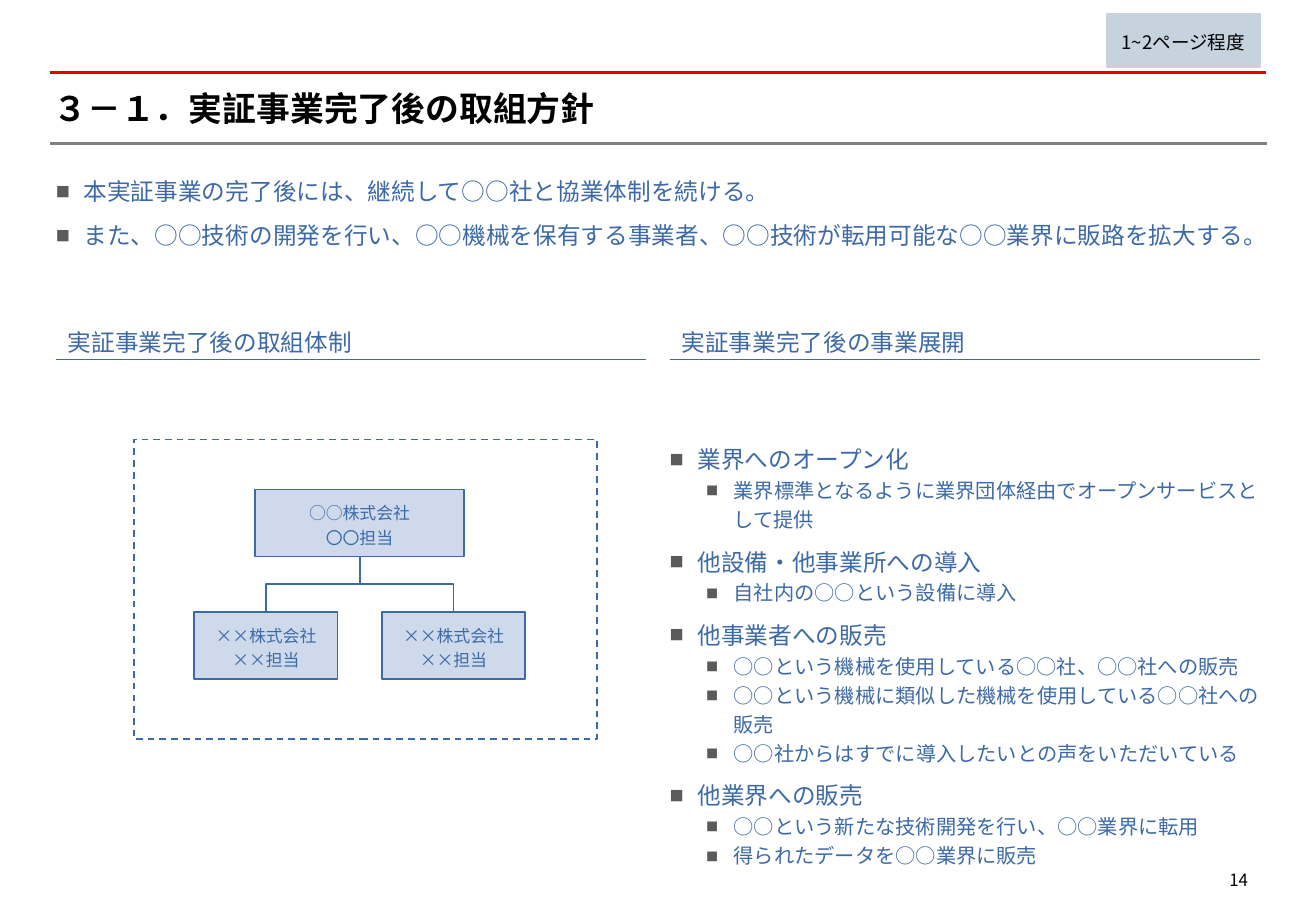
from lxml import etree
from pptx import Presentation
from pptx.dml.color import RGBColor
from pptx.enum.dml import MSO_LINE_DASH_STYLE as DASH
from pptx.enum.shapes import MSO_CONNECTOR as CONN, MSO_SHAPE
from pptx.enum.text import MSO_ANCHOR as ANCHOR, PP_ALIGN as ALIGN
from pptx.oxml.ns import qn
from pptx.util import Cm, Pt

FONT = "Noto Sans CJK JP"
BLACK = RGBColor(0x00, 0x00, 0x00)
BLUE = RGBColor(0x3D, 0x6A, 0xA7)
PALE_BLUE = RGBColor(0xCE, 0xDA, 0xEB)
TAG_GREY = RGBColor(0xC6, 0xD2, 0xDE)
RED = RGBColor(0xE6, 0x00, 0x00)
GREY = RGBColor(0x80, 0x80, 0x80)


def write(tf, text, size=14, color=BLUE, bold=False, align=ALIGN.LEFT,
          spacing=1.2, before=0, after=0, level=None):
    """Add a paragraph to tf; a level makes it a bullet."""
    p = tf.paragraphs[0]
    if p.runs:
        p = tf.add_paragraph()
    if level is not None:
        p.level = level
        pPr = p._p.get_or_add_pPr()
        pPr.set("marL", str(Cm(0.58 + 0.76 * level)))
        pPr.set("indent", str(Cm(-0.58)))
        clr = etree.SubElement(pPr, qn("a:buClr"))
        etree.SubElement(clr, qn("a:srgbClr"), val="5A5A5A")
        etree.SubElement(pPr, qn("a:buSzPct"), val="60000")
        etree.SubElement(pPr, qn("a:buFont"), typeface=FONT)
        etree.SubElement(pPr, qn("a:buChar"), char="■")
    p.alignment, p.line_spacing = align, spacing
    p.space_before, p.space_after = Pt(before), Pt(after)
    r = p.add_run()
    r.text = text
    r.font.name, r.font.size, r.font.bold = FONT, Pt(size), bold
    r.font.color.rgb = color
    etree.SubElement(r._r.get_or_add_rPr(), qn("a:ea"), typeface=FONT)


def set_frame(tf, wrap=True, anchor=ANCHOR.TOP, side=0, top=0):
    tf.word_wrap, tf.vertical_anchor = wrap, anchor
    tf.margin_left = tf.margin_right = Cm(side)
    tf.margin_top = tf.margin_bottom = Cm(top)
    return tf


prs = Presentation()
prs.slide_width, prs.slide_height = Cm(27.51), Cm(19.05)
s = prs.slides.add_slide(prs.slide_layouts[5])

# Title
title = s.shapes.title
title.left, title.top, title.width, title.height = Cm(1.12), Cm(1.83), Cm(25.17), Cm(0.86)
write(set_frame(title.text_frame, anchor=ANCHOR.MIDDLE), "３－１．実証事業完了後の取組方針",
      size=20, color=BLACK, bold=True, spacing=1)

# Page number
sp = s.shapes.add_textbox(Cm(25.22), Cm(17.98), Cm(1.12), Cm(0.71))
write(set_frame(sp.text_frame, wrap=False, side=0.25, top=0.13), "14",
      size=10, color=BLACK, align=ALIGN.RIGHT)

# Summary
summary = [
    "本実証事業の完了後には、継続して○○社と協業体制を続ける。",
    "また、○○技術の開発を行い、○○機械を保有する事業者、○○技術が転用可能な○○業界に販路を拡大する。",
]
sp = s.shapes.add_textbox(Cm(1.17), Cm(3.58), Cm(25.17), Cm(1.57))
tf = set_frame(sp.text_frame)
for i, text in enumerate(summary):
    write(tf, text, before=6 * i, level=0)

# Column headings
for x, text in [(1.17, "実証事業完了後の取組体制"), (14, "実証事業完了後の事業展開")]:
    sp = s.shapes.add_textbox(Cm(x), Cm(6.66), Cm(12.34), Cm(0.86))
    write(set_frame(sp.text_frame, wrap=False, anchor=ANCHOR.MIDDLE, side=0.25, top=0.13), text)

# Business plan
plan = [
    ("業界へのオープン化", ["業界標準となるように業界団体経由でオープンサービスとして提供"]),
    ("他設備・他事業所への導入", ["自社内の○○という設備に導入"]),
    ("他事業者への販売", [
        "○○という機械を使用している○○社、○○社への販売",
        "○○という機械に類似した機械を使用している○○社への販売",
        "○○社からはすでに導入したいとの声をいただいている",
    ]),
    ("他業界への販売", ["○○という新たな技術開発を行い、○○業界に転用", "得られたデータを○○業界に販売"]),
]
sp = s.shapes.add_textbox(Cm(14), Cm(9.19), Cm(12.34), Cm(7.82))
tf = set_frame(sp.text_frame)
for heading, details in plan:
    write(tf, heading, level=0)
    for i, detail in enumerate(details, 1):
        write(tf, detail, size=12, after=6 if i == len(details) else 0, level=1)

# Organisation chart frame
frame = s.shapes.add_shape(MSO_SHAPE.RECTANGLE, Cm(2.8), Cm(9.19), Cm(9.68), Cm(6.27))
frame.shadow.inherit = False
frame.fill.background()
frame.line.color.rgb, frame.line.width = BLUE, Pt(1)
frame.line.dash_style = DASH.DASH

# Company boxes and the page-count tag
boxes = [
    (5.33, 10.24, 4.37, 1.4, PALE_BLUE, BLUE, BLUE, 10, ["○○株式会社", "〇〇担当"]),
    (4.06, 12.8, 3, 1.4, PALE_BLUE, BLUE, BLUE, 10, ["××株式会社", "××担当"]),
    (7.98, 12.8, 3, 1.4, PALE_BLUE, BLUE, BLUE, 10, ["××株式会社", "××担当"]),
    (23.14, 0.28, 3.2, 1.12, TAG_GREY, TAG_GREY, BLACK, 11, ["1~2ページ程度"]),
]
for x, y, w, h, fill, line, color, size, texts in boxes:
    sp = s.shapes.add_shape(MSO_SHAPE.RECTANGLE, Cm(x), Cm(y), Cm(w), Cm(h))
    sp.shadow.inherit = False
    sp.fill.solid()
    sp.fill.fore_color.rgb = fill
    sp.line.color.rgb, sp.line.width = line, Pt(1)
    tf = set_frame(sp.text_frame, wrap=False, anchor=ANCHOR.MIDDLE, side=0.05, top=0.05)
    for text in texts:
        write(tf, text, size=size, color=color, align=ALIGN.CENTER)

# Rules: kind, x1, y1, x2, y2, colour, width, rotation
rules = [
    (CONN.STRAIGHT, 1.04, 1.52, 26.47, 1.52, RED, 2, 0),
    (CONN.STRAIGHT, 1.04, 3, 26.49, 3, GREY, 1.25, 0),
    (CONN.STRAIGHT, 1.17, 7.52, 13.51, 7.52, BLUE, 0.75, 0),
    (CONN.STRAIGHT, 14, 7.52, 26.34, 7.52, BLUE, 0.75, 0),
]
# Elbows leave the parent downwards, so each is laid sideways and turned by 90 degrees
parent_x, parent_y, child_y = 7.52, 11.64, 12.8
half_h = (child_y - parent_y) / 2
for child_x in (5.56, 9.48):
    cx, cy = (parent_x + child_x) / 2, parent_y + half_h
    half_w = (child_x - parent_x) / 2
    rules.append((CONN.ELBOW, cx - half_h, cy + half_w, cx + half_h, cy - half_w, BLUE, 1, 90))

for kind, x1, y1, x2, y2, color, width, rotation in rules:
    line = s.shapes.add_connector(kind, Cm(x1), Cm(y1), Cm(x2), Cm(y2))
    line.line.color.rgb, line.line.width = color, Pt(width)
    spPr = line._element.spPr
    etree.SubElement(spPr, qn("a:effectLst"))
    if rotation:
        spPr.find(qn("a:xfrm")).set("rot", str(rotation * 60000))

prs.save("out.pptx")
